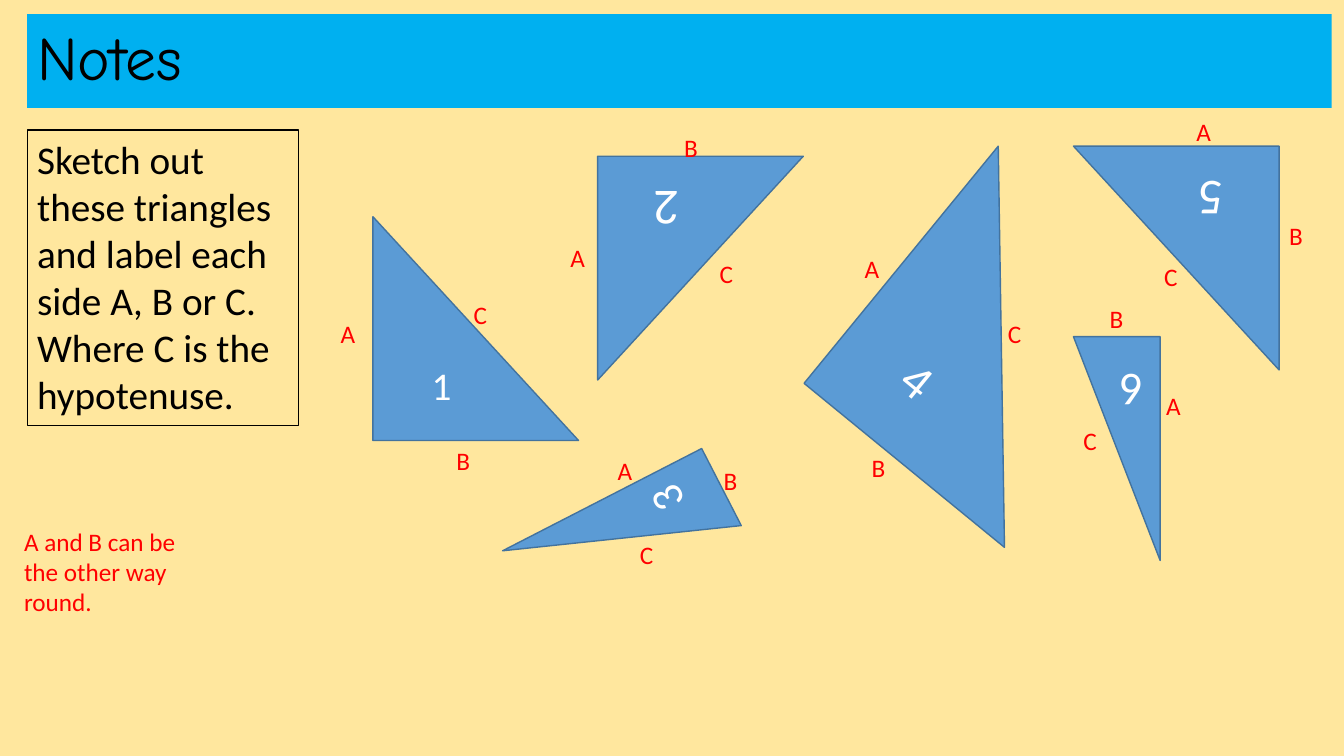
from dataclasses import dataclass

from pptx import Presentation
from pptx.dml.color import RGBColor
from pptx.enum.shapes import MSO_SHAPE
from pptx.enum.text import MSO_ANCHOR, MSO_AUTO_SIZE, PP_ALIGN
from pptx.util import Inches, Pt

COLUMNS, ROWS = 80, 45


@dataclass(frozen=True)
class Theme:
    background: str = "FFE79E"
    banner: str = "00B0F0"
    triangle: str = "5B9BD5"
    outline: str = "43739E"
    ink: str = "000000"
    answer: str = "FF0000"
    number: str = "FFFFFF"
    heading_font: str = "Comic Neue"
    body_font: str = "Calibri"
    heading_size: int = 44
    task_size: int = 28
    answer_size: int = 18


class Sheet:
    """Draws on one slide, placing everything in columns and rows."""

    def __init__(self, deck, theme):
        self.theme = theme
        self.slide = deck.slides.add_slide(deck.slide_layouts[5])
        self.column = deck.slide_width / COLUMNS
        self.row = deck.slide_height / ROWS
        self.paint(self.slide.background.fill, theme.background)

    def box(self, left, top, width, height):
        """Turn grid units into EMU."""
        return (round(left * self.column), round(top * self.row),
                round(width * self.column), round(height * self.row))

    def paint(self, fill, color):
        fill.solid()
        fill.fore_color.rgb = RGBColor.from_string(color)

    def outline(self, shape, color, width):
        self.paint(shape.line.fill, color)
        shape.line.width = Pt(width)

    def set_text(self, frame, text, size, color, font=None,
                 align=PP_ALIGN.LEFT):
        frame.text = text
        frame.word_wrap = True
        for paragraph in frame.paragraphs:
            paragraph.alignment = align
            paragraph.font.name = font or self.theme.body_font
            paragraph.font.size = Pt(size)
            paragraph.font.color.rgb = RGBColor.from_string(color)

    def title(self, text, *place):
        title = self.slide.shapes.title
        title.left, title.top, title.width, title.height = self.box(*place)
        self.paint(title.fill, self.theme.banner)
        frame = title.text_frame
        self.set_text(frame, text, self.theme.heading_size, self.theme.ink,
                      self.theme.heading_font)
        frame.auto_size = MSO_AUTO_SIZE.NONE
        frame.vertical_anchor = MSO_ANCHOR.MIDDLE
        frame.paragraphs[0].line_spacing = 0.9

    def text(self, text, place, size, color):
        textbox = self.slide.shapes.add_textbox(*self.box(*place))
        self.set_text(textbox.text_frame, text, size, color)
        textbox.text_frame.auto_size = MSO_AUTO_SIZE.SHAPE_TO_FIT_TEXT
        return textbox

    def task(self, text, *place):
        framed = self.text(text, place, self.theme.task_size, self.theme.ink)
        self.outline(framed, self.theme.ink, 0.75)

    def answer(self, text, *place):
        self.text(text, place, self.theme.answer_size, self.theme.answer)

    def triangle(self, number, place, size, flips="", rotation=0):
        """Add a numbered right triangle; flips holds any of H and V."""
        triangle = self.slide.shapes.add_shape(
            MSO_SHAPE.RIGHT_TRIANGLE, *self.box(*place))
        triangle.shadow.inherit = False
        triangle.rotation = rotation
        for axis in flips:
            triangle._element.spPr.get_or_add_xfrm().set(f"flip{axis}", "1")
        self.paint(triangle.fill, self.theme.triangle)
        self.outline(triangle, self.theme.outline, 1)
        self.set_text(triangle.text_frame, number, size, self.theme.number,
                      align=PP_ALIGN.CENTER)
        triangle.text_frame.vertical_anchor = MSO_ANCHOR.MIDDLE


# number, place, number size, flips, rotation
TRIANGLES = [
    ("1", (22.2, 12.9, 12.24, 13.32), 28, "", 0),
    ("2", (35.58, 9.3, 12.24, 13.32), 36, "V", 0),
    ("3", (34.44, 25.38, 5.16, 13.32), 32, "V", 62.8),
    ("4", (51.9, 11.52, 15.42, 18.24), 36, "HV", 219.3),
    ("5", (63.9, 8.7, 12.24, 13.32), 36, "HV", 0),
    ("6", (63.9, 20.04, 5.16, 13.32), 32, "HV", 0),
]

# left and top of the labels A, B and C of each triangle
SIDE_LABELS = [
    ((19.68, 18.66), (26.58, 26.22), (27.6, 17.52)),
    ((33.36, 14.16), (40.14, 7.56), (42.24, 15.06)),
    ((36.18, 26.82), (42.48, 27.42), (37.5, 31.8)),
    ((50.88, 14.76), (51.3, 26.64), (59.4, 18.66)),
    ((70.62, 6.6), (76.14, 12.84), (68.7, 15.24)),
    ((68.82, 22.92), (65.46, 17.76), (63.9, 25.02)),
]
LABEL_SIZE = (2.58, 2.4)


def main():
    deck = Presentation()
    deck.slide_width, deck.slide_height = Inches(13.33), Inches(7.5)
    sheet = Sheet(deck, Theme())
    sheet.title("Notes", 1.62, 0.84, 77.64, 5.58)
    for triangle in TRIANGLES:
        sheet.triangle(*triangle)
    sheet.task("Sketch out these triangles and label each side A, B or C. "
               "Where C is the hypotenuse.", 1.62, 7.74, 16.14, 17.58)
    for corners in SIDE_LABELS:
        for side, corner in zip("ABC", corners):
            sheet.answer(side, *corner, *LABEL_SIZE)
    sheet.answer("A and B can be\nthe other way round.",
                 0.84, 31.02, 11.76, 6.06)
    deck.save("out.pptx")


if __name__ == "__main__":
    main()
